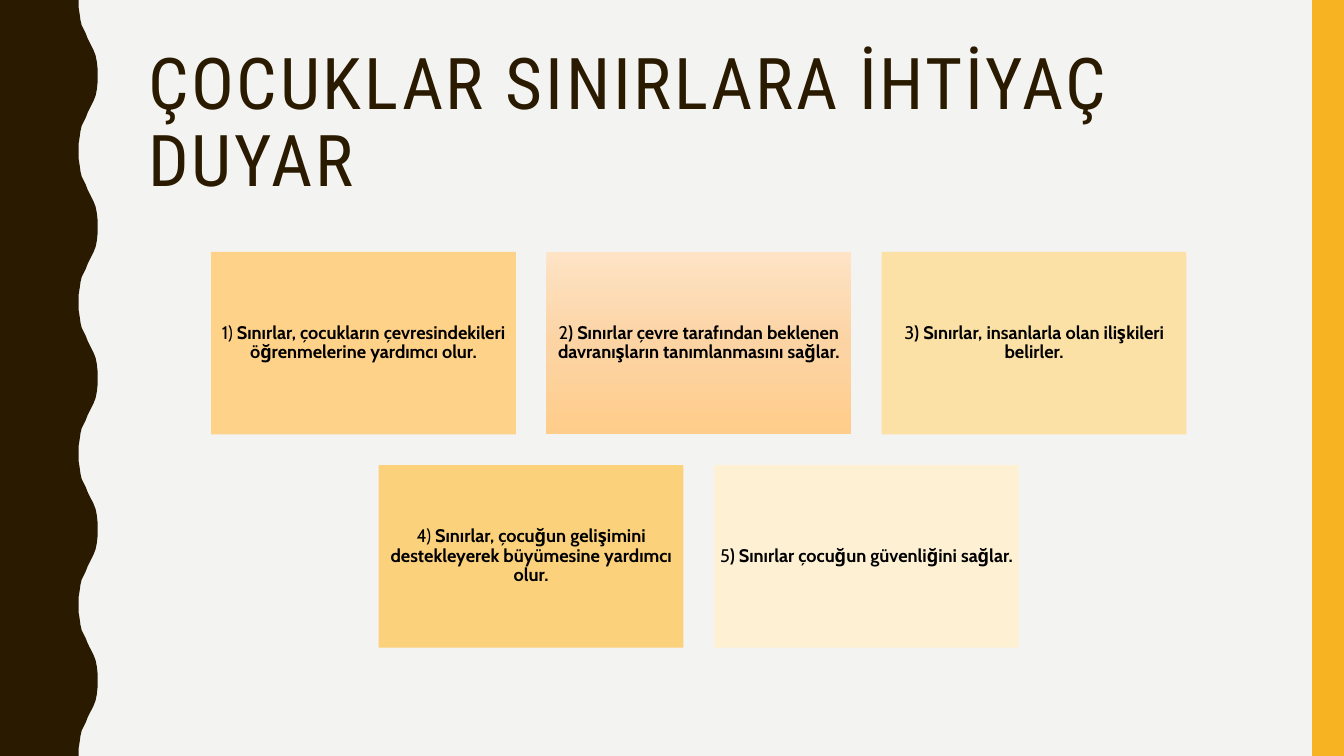
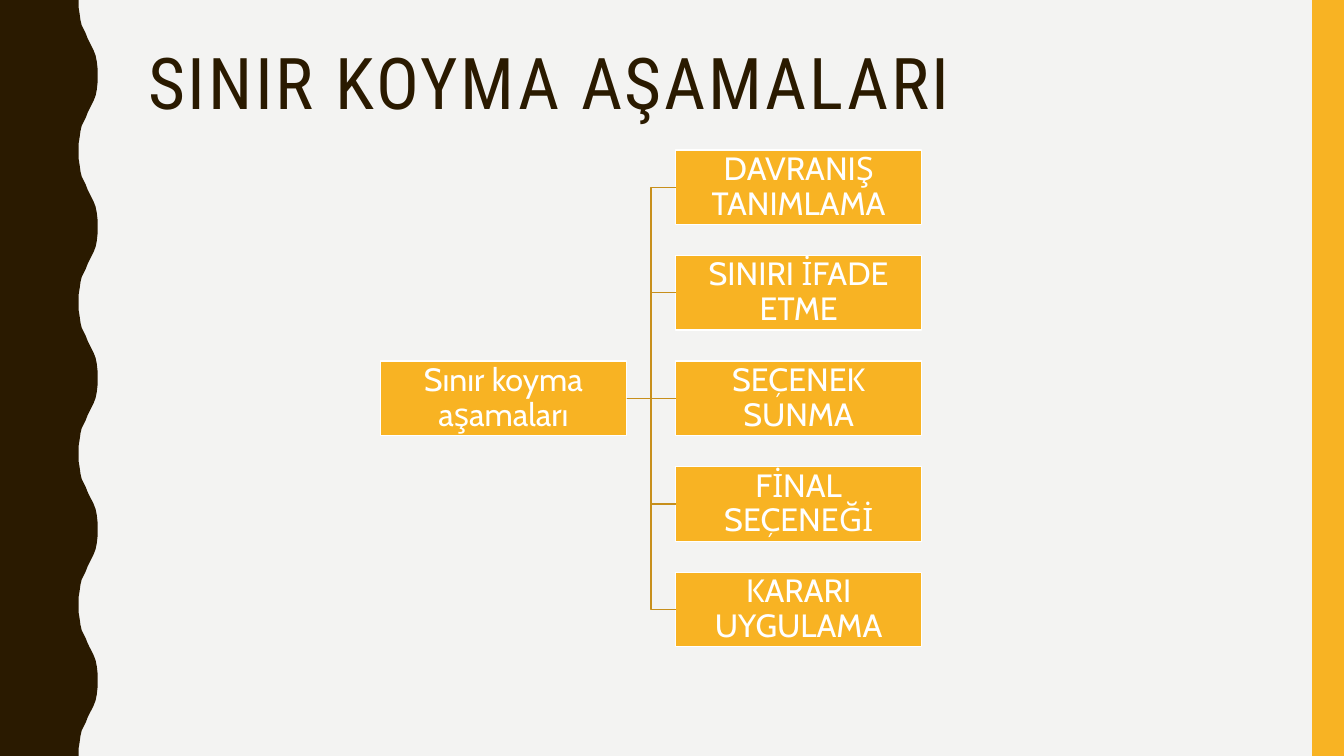
from copy import deepcopy
from typing import NamedTuple

from lxml import etree
from pptx import Presentation
from pptx.dml.color import RGBColor
from pptx.enum.shapes import MSO_CONNECTOR, MSO_SHAPE
from pptx.enum.text import MSO_ANCHOR, MSO_AUTO_SIZE, PP_ALIGN
from pptx.oxml.ns import qn
from pptx.util import Cm, Pt

RECTANGLE = MSO_SHAPE.RECTANGLE
ELBOW, STRAIGHT = MSO_CONNECTOR.ELBOW, MSO_CONNECTOR.STRAIGHT
TOP, MIDDLE = MSO_ANCHOR.TOP, MSO_ANCHOR.MIDDLE
LEFT, CENTER = PP_ALIGN.LEFT, PP_ALIGN.CENTER
NO_AUTOFIT = MSO_AUTO_SIZE.NONE

# Shared look
PAGE_WIDTH, PAGE_HEIGHT = 33.87, 19.05
BACKGROUND, DARK, GOLD = "F3F3F2", "2A1A00", "F8B323"
BRANCH, WHITE, BLACK = "C78F1C", "FFFFFF", "000000"
TITLE_FONT, BODY_FONT = "Roboto Condensed", "Cabin"
TITLE_ONLY = 5
LINE_SPACING = 0.9
RIGHT_SITE, LEFT_SITE = 3, 1

# Half a wave of the left band as (x, y) in cm; the other half mirrors it
WAVE_LENGTH = 3.81
HALF_WAVE = [
    (1.98, 0), (1.98, 0.18), (2.01, 0.36), (2.03, 0.51), (2.06, 0.64),
    (2.11, 0.74), (2.16, 0.84), (2.21, 0.97), (2.26, 1.07), (2.31, 1.17),
    (2.36, 1.27), (2.41, 1.4), (2.44, 1.55), (2.46, 1.73), (2.46, 1.9),
]


class Area(NamedTuple):
    """Left, top, width and height in cm."""
    left: float
    top: float
    width: float
    height: float

    def lengths(self) -> list:
        return [Cm(value) for value in self]


class Card(NamedTuple):
    number: str
    sentence: str
    fills: tuple


TITLE_AREA = Area(3.48, 1.07, 28.27, 4.14)
GOLD_BAND = Area(33.07, 0, 0.8, PAGE_HEIGHT)

# Slide 1: rows of cards, each row centred
CARD_ROWS = [
    [
        Card("1) ", "Sınırlar, çocukların çevresindekileri öğrenmelerine "
             "yardımcı olur.", ("FFD28A",)),
        Card("2", ") Sınırlar çevre tarafından beklenen davranışların "
             "tanımlanmasını sağlar.", ("FEE3C5", "FCD4A4", "FFCD8B")),
        Card("3", ") Sınırlar, insanlarla olan ilişkileri belirler.",
             ("FCE1A7",)),
    ],
    [
        Card("4) ", "Sınırlar, çocuğun gelişimini destekleyerek büyümesine "
             "yardımcı olur.", ("FBD17B",)),
        Card("5", ") Sınırlar çocuğun güvenliğini sağlar.", ("FEF0D3",)),
    ],
]
CARD_WIDTH, CARD_HEIGHT, CARD_GAP = 7.68, 4.6, 0.77
CARDS_CENTER, CARDS_TOP = 17.61, 6.35

# Slide 2: one root box and its steps
ROOT = "Sınır koyma aşamaları"
STEPS = [
    "DAVRANIŞ TANIMLAMA",
    "SINIRI İFADE ETME",
    "SEÇENEK SUNMA",
    "FİNAL SEÇENEĞİ",
    "KARARI UYGULAMA",
]
STEP_WIDTH, STEP_HEIGHT, STEP_PITCH = 6.2, 1.88, 2.66
ROOT_LEFT, STEPS_LEFT, STEPS_TOP = 9.59, 17.03, 3.78


def color(code: str) -> RGBColor:
    return RGBColor.from_string(code)


def add_span(para, text: str, *, size: float, font: str = BODY_FONT,
             ink: str = BLACK, bold: bool = False, tracking: int = 0) -> None:
    """Add a formatted run; tracking is in points."""
    span = para.add_run()
    span.text = text
    span.font.size = Pt(size)
    span.font.name = font
    span.font.bold = bold
    span.font.color.rgb = color(ink)
    if tracking:
        span.font._element.set("spc", str(tracking * 100))


def prepare_text(box, *, anchor=MIDDLE, align=CENTER, inset: float = 0.25,
                 inset_y: float = 0.13):
    """Set the text frame of a box and return its paragraph."""
    frame = box.text_frame
    frame.word_wrap = True
    frame.auto_size = NO_AUTOFIT
    frame.vertical_anchor = anchor
    frame.margin_left = frame.margin_right = Cm(inset)
    frame.margin_top = frame.margin_bottom = Cm(inset_y)
    para = frame.paragraphs[0]
    para.alignment = align
    para.line_spacing = LINE_SPACING
    return para


def paint(shape, fills: tuple, outline: str = "") -> None:
    """Fill with one colour, or with an even downward gradient of several."""
    shape.shadow.inherit = False
    if len(fills) == 1:
        shape.fill.solid()
        shape.fill.fore_color.rgb = color(fills[0])
    else:
        shape.fill.gradient()
        shape.fill.gradient_angle = 270
        stops = shape.element.spPr.find(".//" + qn("a:gsLst"))
        while len(stops) < len(fills):
            stops.insert(1, deepcopy(stops[0]))
        for index, stop in enumerate(shape.fill.gradient_stops):
            stop.color.rgb = color(fills[index])
            stop.position = index / (len(fills) - 1)
    if outline:
        shape.line.color.rgb = color(outline)
        shape.line.width = Pt(1)
    else:
        shape.line.fill.background()


def add_box(page, area: Area, fills: tuple, outline: str = ""):
    box = page.shapes.add_shape(RECTANGLE, *area.lengths())
    paint(box, fills, outline)
    return box


def add_wave_band(page):
    """Draw the dark band with its wavy right edge."""
    mirrored = [(x, WAVE_LENGTH - y) for x, y in reversed(HALF_WAVE)]
    waves = round(PAGE_HEIGHT / WAVE_LENGTH)
    edge = [(x, y + wave * WAVE_LENGTH)
            for wave in range(waves) for x, y in HALF_WAVE + mirrored]
    outline = page.shapes.build_freeform(0, 0)
    outline.add_line_segments(
        [(Cm(x), Cm(y)) for x, y in edge + [(0, PAGE_HEIGHT)]])
    band = outline.convert_to_shape()
    paint(band, (DARK,))
    return band


def set_up_layout(layout, page) -> None:
    """Give the layout its background, title place and bands."""
    layout.background.fill.solid()
    layout.background.fill.fore_color.rgb = color(BACKGROUND)
    title = layout.placeholders[0]
    title.left, title.top, title.width, title.height = TITLE_AREA.lengths()
    # Bands are drawn on a page, then moved behind the layout's placeholders
    for band in (add_box(page, GOLD_BAND, (GOLD,)), add_wave_band(page)):
        layout.shapes.element.insert(2, band.element)


def set_title(page, text: str) -> None:
    para = prepare_text(page.shapes.title, anchor=TOP, align=LEFT)
    add_span(para, text, size=51, font=TITLE_FONT, ink=DARK, tracking=2)


def add_cards(page) -> None:
    for row, cards in enumerate(CARD_ROWS):
        pitch = CARD_WIDTH + CARD_GAP
        left = CARDS_CENTER - (len(cards) * pitch - CARD_GAP) / 2
        top = CARDS_TOP + row * (CARD_HEIGHT + CARD_GAP)
        for column, card in enumerate(cards):
            area = Area(left + column * pitch, top, CARD_WIDTH, CARD_HEIGHT)
            para = prepare_text(add_box(page, area, card.fills),
                                inset=0.13)
            add_span(para, card.number, size=13)
            add_span(para, card.sentence, size=13, bold=True)


def add_step(page, text: str, left: float, row: int):
    area = Area(left, STEPS_TOP + row * STEP_PITCH, STEP_WIDTH, STEP_HEIGHT)
    box = add_box(page, area, (GOLD,), WHITE)
    para = prepare_text(box, inset=0.05, inset_y=0.05)
    add_span(para, text, size=23, ink=WHITE)
    return box


def add_branch(page, root, step) -> None:
    kind = STRAIGHT if root.top == step.top else ELBOW
    branch = page.shapes.add_connector(kind, 0, 0, 0, 0)
    branch.begin_connect(root, RIGHT_SITE)
    branch.end_connect(step, LEFT_SITE)
    branch.line.color.rgb = color(BRANCH)
    branch.line.width = Pt(1)
    etree.SubElement(branch.element.spPr, qn("a:effectLst"))


def add_step_tree(page) -> None:
    middle = len(STEPS) // 2
    root = add_step(page, ROOT, ROOT_LEFT, middle)
    for row, text in enumerate(STEPS):
        add_branch(page, root, add_step(page, text, STEPS_LEFT, row))


def main() -> None:
    deck = Presentation()
    deck.slide_width, deck.slide_height = Cm(PAGE_WIDTH), Cm(PAGE_HEIGHT)
    layout = deck.slide_layouts[TITLE_ONLY]
    needs_page, steps_page = [deck.slides.add_slide(layout) for _ in range(2)]
    set_up_layout(layout, needs_page)

    set_title(needs_page, "ÇOCUKLAR SINIRLARA İHTİYAÇ DUYAR")
    add_cards(needs_page)

    set_title(steps_page, "SINIR KOYMA AŞAMALARI")
    add_step_tree(steps_page)

    deck.save("out.pptx")


if __name__ == "__main__":
    main()
